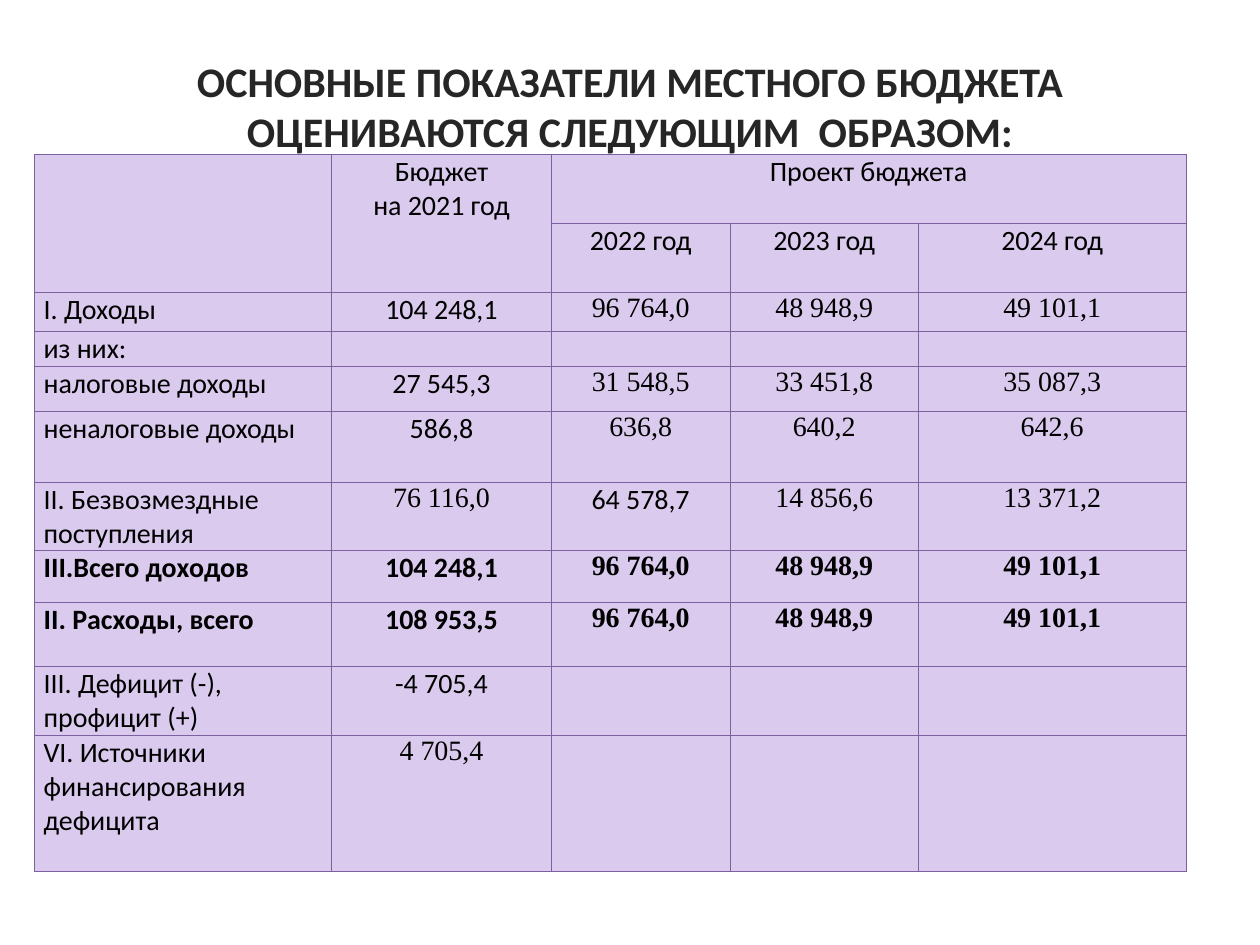
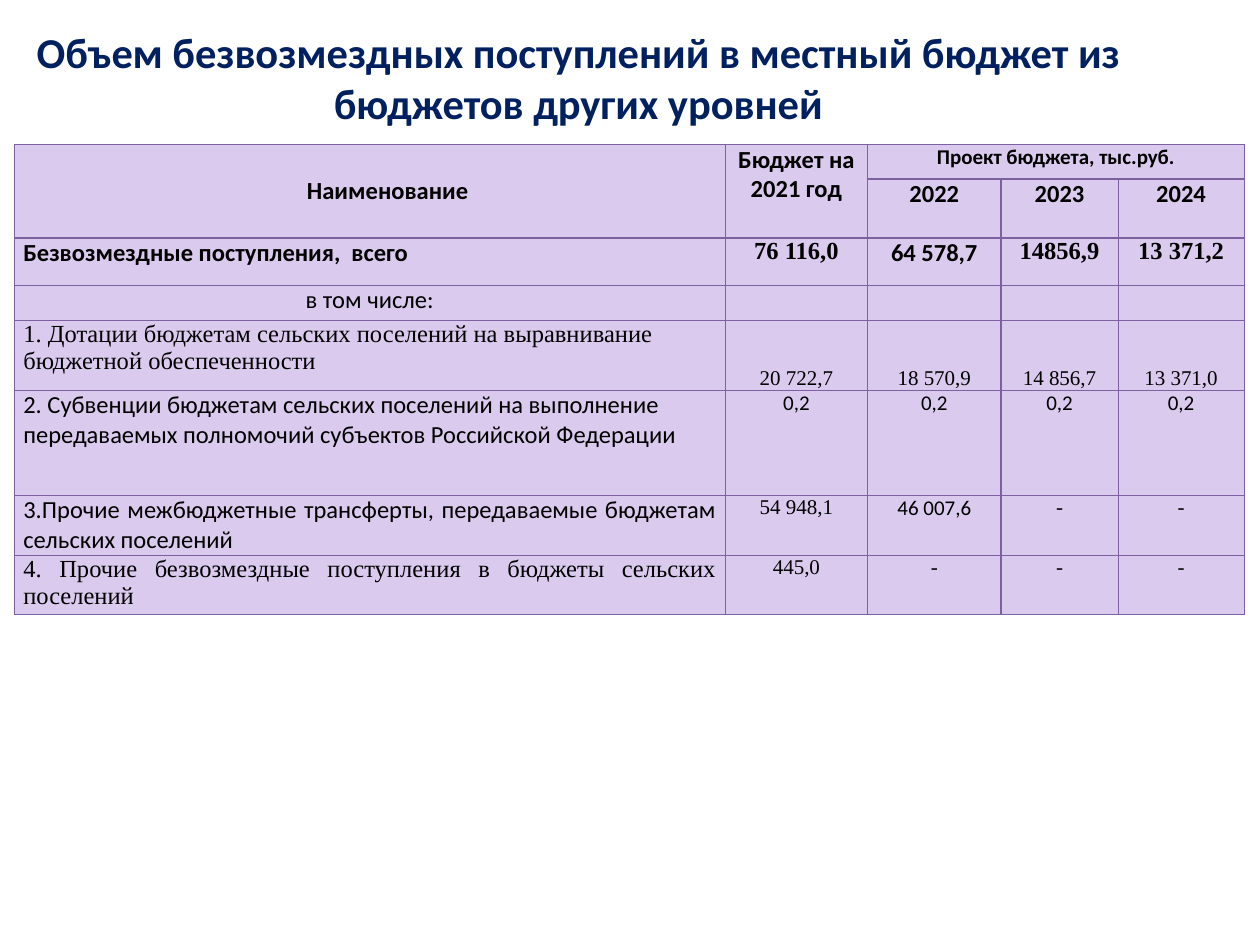
"""Builds two slides with the main figures of a local budget."""
import lxml.etree
import pptx
import pptx.dml.color
import pptx.enum.text
import pptx.oxml.ns
import pptx.util

Cm, Pt = pptx.util.Cm, pptx.util.Pt
RGBColor = pptx.dml.color.RGBColor
qn = pptx.oxml.ns.qn
ANCHOR = pptx.enum.text.MSO_ANCHOR
ALIGN = pptx.enum.text.PP_ALIGN
LEFT, CENTER, JUSTIFY = ALIGN.LEFT, ALIGN.CENTER, ALIGN.JUSTIFY

BLACK = RGBColor(0x00, 0x00, 0x00)
CHARCOAL = RGBColor(0x26, 0x26, 0x26)
NAVY = RGBColor(0x00, 0x20, 0x60)
LILAC = RGBColor(0xDA, 0xCA, 0xED)
PURPLE = RGBColor(0x7D, 0x60, 0xA0)
SANS, SERIF = "Calibri", "Times New Roman"

# Each row: height, texts, serif columns, bold, label alignment, label size, value size.
INDICATORS = {
    "title": "ОСНОВНЫЕ ПОКАЗАТЕЛИ МЕСТНОГО БЮДЖЕТА ОЦЕНИВАЮТСЯ СЛЕДУЮЩИМ  ОБРАЗОМ:",
    "title_box": (1.27, 0.33, 22.86, 3.61),
    "title_style": (24, CHARCOAL, ANCHOR.MIDDLE, 0.13),
    "table_at": (0.7, 3.12),
    "cols": (5.99, 4.42, 3.61, 3.79, 5.4),
    "rows": [
        (1.39, ("", "Бюджет\nна 2021 год", "Проект бюджета", "", ""), (), False, CENTER, 16, 16),
        (1.39, ("", "", "2022 год", "2023 год", "2024 год"), (), False, CENTER, 16, 16),
        (0.79, ("I. Доходы", "104 248,1", "96 764,0", "48 948,9", "49 101,1"),
         (2, 3, 4), False, JUSTIFY, 16, 16),
        (0.7, ("из них:", "", "", "", ""), (), False, LEFT, 16, 16),
        (0.91, ("налоговые доходы", "27 545,3", "31 548,5", "33 451,8", "35 087,3"),
         (2, 3, 4), False, LEFT, 16, 16),
        (1.43, ("неналоговые доходы", "586,8", "636,8", "640,2", "642,6"),
         (2, 3, 4), False, LEFT, 16, 16),
        (1.37, ("II. Безвозмездные поступления", "76 116,0", "64 578,7", "14 856,6", "13 371,2"),
         (1, 3, 4), False, LEFT, 16, 16),
        (1.05, ("III.Всего доходов", "104 248,1", "96 764,0", "48 948,9", "49 101,1"),
         (2, 3, 4), True, LEFT, 16, 16),
        (1.29, ("II. Расходы, всего", "108 953,5", "96 764,0", "48 948,9", "49 101,1"),
         (2, 3, 4), True, LEFT, 16, 16),
        (1.39, ("III. Дефицит (-), профицит (+)", "-4 705,4", "", "", ""),
         (), False, LEFT, 16, 16),
        (2.74, ("VI. Источники финансирования дефицита", "4 705,4", "", "", ""),
         (1,), False, LEFT, 16, 16),
    ],
}
TRANSFERS = {
    "title": "Объем безвозмездных поступлений в местный бюджет из бюджетов других уровней",
    "title_box": (0.23, 0.53, 22.86, 2.57),
    "title_style": (24.3, NAVY, ANCHOR.TOP, 0),
    "table_at": (0.29, 2.92),
    "cols": (14.33, 2.87, 2.69, 2.36, 2.54),
    "rows": [
        (0.69, ("Наименование", "Бюджет на 2021 год", "Проект бюджета, тыс.руб.", "", ""),
         (), True, CENTER, 14, 14),
        (1.19, ("", "", "2022", "2023", "2024"), (), True, CENTER, 14, 14),
        (0.95, ("Безвозмездные поступления,  всего", "76 116,0", "64 578,7", "14856,9", "13 371,2"),
         (1, 3, 4), True, LEFT, 14, 14),
        (0.71, ("в том числе:", "", "", "", ""), (), False, CENTER, 14, 14),
        (1.41, ("1. Дотации бюджетам сельских поселений на выравнивание бюджетной обеспеченности",
                "20 722,7", "18 570,9", "14 856,7", "13 371,0"),
         range(5), False, LEFT, 14, 12),
        (2.12, ("2. Субвенции бюджетам сельских поселений на выполнение передаваемых "
                "полномочий субъектов Российской Федерации", "0,2", "0,2", "0,2", "0,2"),
         (), False, LEFT, 14, 12),
        (1.21, ("3.Прочие межбюджетные трансферты, передаваемые бюджетам сельских поселений",
                "54 948,1", "46 007,6", "-", "-"),
         (1, 3, 4), False, JUSTIFY, 14, 12),
        (1.07, ("4. Прочие безвозмездные поступления в бюджеты сельских поселений",
                "445,0", "-", "-", "-"),
         range(5), False, JUSTIFY, 14, 12),
    ],
}
MERGES = [((0, 0), (1, 0)), ((0, 1), (1, 1)), ((0, 2), (0, 4))]


def style_text(tf, align, size, font, color, bold):
    for p in tf.paragraphs:
        p.alignment = align
        for r in p.runs:
            r.font.size, r.font.name, r.font.bold = Pt(size), font, bold
            r.font.color.rgb = color
        if not p.runs:
            lxml.etree.SubElement(p._p, qn("a:endParaRPr"), sz=str(size * 100))


def style_cell(cell):
    cell.margin_left = cell.margin_right = Cm(0.18)
    cell.margin_top = cell.margin_bottom = 0
    tcPr = cell._tc.get_or_add_tcPr()
    for i, side in enumerate(("lnL", "lnR", "lnT", "lnB")):
        ln = lxml.etree.Element(qn("a:" + side), w=str(Pt(0.75)))
        fill = lxml.etree.SubElement(ln, qn("a:solidFill"))
        lxml.etree.SubElement(fill, qn("a:srgbClr"), val=str(PURPLE))
        tcPr.insert(i, ln)
    cell.fill.solid()
    cell.fill.fore_color.rgb = LILAC


def add_title(s, content):
    size, color, anchor, inset = content["title_style"]
    tf = s.shapes.add_textbox(*map(Cm, content["title_box"])).text_frame
    tf.word_wrap = True
    tf.vertical_anchor = anchor
    tf.margin_top = tf.margin_bottom = Cm(inset)
    tf.text = content["title"]
    style_text(tf, CENTER, size, SANS, color, True)


def add_budget_table(s, content):
    cols, rows = content["cols"], content["rows"]
    x, y = content["table_at"]
    height = sum(row[0] for row in rows)
    table = s.shapes.add_table(len(rows), len(cols), Cm(x), Cm(y),
                               Cm(sum(cols)), Cm(height)).table
    for column, width in zip(table.columns, cols):
        column.width = Cm(width)
    for i, (height, texts, serif, bold, align, label_size, size) in enumerate(rows):
        table.rows[i].height = Cm(height)
        for j, text in enumerate(texts):
            cell = table.cell(i, j)
            style_cell(cell)
            cell.text_frame.text = text
            style_text(cell.text_frame, CENTER if j else align, size if j else label_size,
                       SERIF if j in serif else SANS, BLACK, bold)
    for first, last in MERGES:
        table.cell(*first).merge(table.cell(*last))
    return table


def main():
    prs = pptx.Presentation()
    prs.slide_width, prs.slide_height = Cm(25.4), Cm(19.05)
    tables = []
    for content in (INDICATORS, TRANSFERS):
        s = prs.slides.add_slide(prs.slide_layouts[6])
        add_title(s, content)
        tables.append(add_budget_table(s, content))
    transfers = tables[1]
    name = transfers.cell(0, 0)
    name.vertical_anchor = ANCHOR.MIDDLE
    name.margin_left = Cm(0.9)
    transfers.cell(0, 2).text_frame.paragraphs[0].runs[0].font.size = Pt(12)
    for j in range(1, 5):
        transfers.cell(4, j).vertical_anchor = ANCHOR.BOTTOM
    prs.save("out.pptx")


if __name__ == "__main__":
    main()
